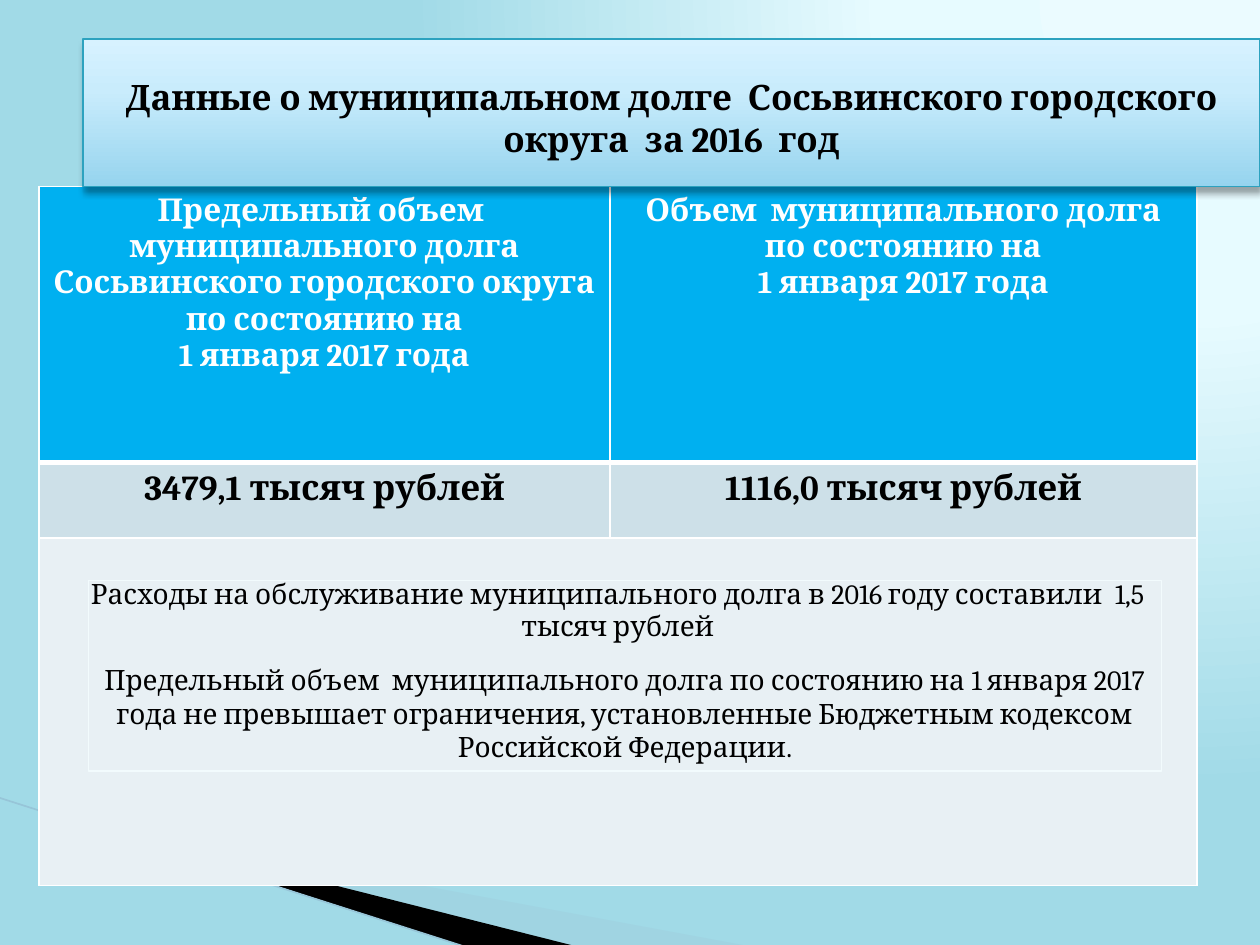
"""Build the slide on the municipal debt of the Sosva urban district."""
import dataclasses
from typing import Any, Optional

import lxml.etree
import pptx
import pptx.dml.color
import pptx.enum.shapes
import pptx.enum.text
import pptx.oxml
import pptx.oxml.ns
import pptx.util

Inches = pptx.util.Inches
Pt = pptx.util.Pt
RGB = pptx.dml.color.RGBColor
qn = pptx.oxml.ns.qn

FONT = "Cambria"
BLACK = RGB(0x00, 0x00, 0x00)
WHITE = RGB(0xFF, 0xFF, 0xFF)
HEADER_BLUE = RGB(0x00, 0xB0, 0xF0)
VALUE_BLUE = RGB(0xCD, 0xE0, 0xE8)
NOTE_BLUE = RGB(0xE8, 0xF0, 0xF4)
RIBBON_BLUE = RGB(0xA0, 0xCB, 0xDC)
RIBBON_LINE = RGB(0x97, 0xC5, 0xD8)
TITLE_LINE = RGB(0x2D, 0xA2, 0xBF)
FRAME_LINE = RGB(0xF2, 0xFB, 0xFD)
BACKGROUND_STOPS = [(0, RGB(0xEB, 0xFB, 0xFF)), (40, RGB(0xE7, 0xFB, 0xFF)),
                    (100, RGB(0xA1, 0xDA, 0xE7))]
TITLE_STOPS = [(0, RGB(0x96, 0xD4, 0xEE)), (65, RGB(0xC9, 0xEC, 0xFC)),
               (100, RGB(0xD7, 0xF2, 0xFF))]


@dataclasses.dataclass
class Ribbon:
    points: list[tuple[float, float]]
    color: RGB
    alpha: Optional[int] = None


@dataclasses.dataclass
class RowStyle:
    height: float
    fill: RGB
    color: RGB
    size: int
    bold: bool
    texts: list[list[str]]
    top: float = 0.05
    bottom_line: float = 1


RIBBONS = [
    Ribbon([(0.55, 6.51), (5.95, 7.51), (4.56, 7.51), (0.55, 6.5)], RIBBON_BLUE, 40),
    Ribbon([(0.53, 6.49), (4.57, 7.51), (3.72, 7.52), (0.54, 6.5)], BLACK),
]
COLUMNS = [4.53, 4.66]
DATE = "1 января 2017 года"
ROWS = [
    RowStyle(2.19, HEADER_BLUE, WHITE, 18, True, [
        ["Предельный объем  муниципального долга Сосьвинского городского округа "
         "по состоянию на", DATE],
        ["Объем  муниципального долга по состоянию на", DATE]], bottom_line=3),
    RowStyle(0.6, VALUE_BLUE, BLACK, 20, True,
             [["3479,1 тысяч рублей"], ["1116,0 тысяч рублей"]]),
    RowStyle(2.76, NOTE_BLUE, BLACK, 16, False, [
        ["Расходы на обслуживание муниципального долга в 2016 году составили  "
         "1,5 тысяч рублей"]], top=0.33),
]


def sub(parent: Any, tag: str, **attrs: Any) -> Any:
    return lxml.etree.SubElement(parent, qn(tag), {k: str(v) for k, v in attrs.items()})


def set_stops(grad: Any, stops: list[tuple[int, RGB]]) -> None:
    gs_lst = grad.find(qn("a:gsLst"))
    for gs in list(gs_lst):
        gs_lst.remove(gs)
    for pos, color in stops:
        sub(sub(gs_lst, "a:gs", pos=pos * 1000), "a:srgbClr", val=color)


def write(tf: Any, texts: list[str], size: int, color: RGB, bold: bool) -> None:
    tf.word_wrap = True
    for i, text in enumerate(texts):
        p = tf.paragraphs[0] if i == 0 else tf.add_paragraph()
        p.text = text
        p.alignment = pptx.enum.text.PP_ALIGN.CENTER
        p.font.name, p.font.size, p.font.bold = FONT, Pt(size), bold
        p.font.color.rgb = color


def add_background(s: Any) -> None:
    s.background.fill.gradient()
    grad = s.element.xpath(".//p:bg//a:gradFill")[0]
    set_stops(grad, BACKGROUND_STOPS)
    grad.remove(grad.find(qn("a:lin")))
    sub(sub(grad, "a:path", path="circle"), "a:fillToRect",
        l=95000, t=-106000, r=5000, b=206000)


def add_ribbon(s: Any, ribbon: Ribbon) -> None:
    points = [(Inches(x), Inches(y)) for x, y in ribbon.points]
    builder = s.shapes.build_freeform(*points[0])
    builder.add_line_segments(points[1:])
    sp = builder.convert_to_shape()
    sp.shadow.inherit = False
    sp.fill.solid()
    sp.fill.fore_color.rgb = ribbon.color
    sp.line.fill.background()
    if ribbon.alpha is not None:
        color = sp.element.spPr.find(qn("a:solidFill"))[0]
        sub(color, "a:alpha", val=ribbon.alpha * 1000)


def add_edge(s: Any) -> None:
    edge = s.shapes.add_connector(pptx.enum.shapes.MSO_CONNECTOR.STRAIGHT, Inches(-0.01),
                                  Inches(6.33), Inches(3.71), Inches(7.52))
    edge.line.color.rgb = RIBBON_LINE
    edge.line.width = Pt(0.95)
    sub(edge.element.spPr, "a:effectLst")


def set_borders(cell: Any, top: float, bottom: float) -> None:
    tc_pr = cell._tc.get_or_add_tcPr()
    widths = {"a:lnL": 1, "a:lnR": 1, "a:lnT": top, "a:lnB": bottom}
    for i, (tag, width) in enumerate(widths.items()):
        ln = sub(tc_pr, tag, w=Pt(width))
        sub(sub(ln, "a:solidFill"), "a:srgbClr", val=WHITE)
        tc_pr.insert(i, ln)


def add_debt_table(s: Any) -> None:
    frame = s.shapes.add_table(len(ROWS), len(COLUMNS), Inches(0.31), Inches(1.48),
                               Inches(sum(COLUMNS)), Inches(sum(r.height for r in ROWS)))
    table = frame.table
    for column, width in zip(table.columns, COLUMNS):
        column.width = Inches(width)
    top_line = 1.0
    for i, row in enumerate(ROWS):
        table.rows[i].height = Inches(row.height)
        for cell in table.rows[i].cells:
            cell.fill.solid()
            cell.fill.fore_color.rgb = row.fill
            cell.margin_top = Inches(row.top)
            set_borders(cell, top_line, row.bottom_line)
        for j, texts in enumerate(row.texts):
            write(table.cell(i, j).text_frame, texts, row.size, row.color, row.bold)
        top_line = row.bottom_line
    table.cell(2, 0).merge(table.cell(2, 1))


def place_title(s: Any) -> None:
    title = s.shapes.title
    title.left, title.top = Inches(0.66), Inches(0.31)
    title.width, title.height = Inches(9.34), Inches(1.17)
    title.fill.gradient()
    title.fill.gradient_angle = 90
    sp_pr = title.element.spPr
    set_stops(sp_pr.find(qn("a:gradFill")), TITLE_STOPS)
    title.line.color.rgb = TITLE_LINE
    title.line.width = Pt(0.75)
    shadow = sub(sub(sp_pr, "a:effectLst"), "a:outerShdw", blurRad=Pt(4), dist=Pt(3),
                 dir=90 * 60000, rotWithShape=0)
    sub(sub(shadow, "a:srgbClr", val=BLACK), "a:alpha", val=35000)
    tf = title.text_frame
    tf.auto_size = pptx.enum.text.MSO_AUTO_SIZE.NONE
    tf.vertical_anchor = pptx.enum.text.MSO_ANCHOR.MIDDLE
    tf.margin_top = Inches(0.13)
    write(tf, ["Данные о муниципальном долге  Сосьвинского городского округа  за 2016  год"],
          20, BLACK, True)
    title.element.getparent().append(title.element)


def add_limit_note(s: Any) -> None:
    sp = s.shapes.add_shape(pptx.enum.shapes.MSO_SHAPE.RECTANGLE, Inches(0.7), Inches(4.61),
                            Inches(8.52), Inches(1.51))
    sp.shadow.inherit = False
    sp.fill.background()
    sp.line.color.rgb = FRAME_LINE
    sp.line.width = Pt(0.75)
    tf = sp.text_frame
    tf.vertical_anchor = pptx.enum.text.MSO_ANCHOR.TOP
    tf.margin_top = Inches(0.65)
    write(tf, ["Предельный объем  муниципального долга по состоянию на 1 января 2017 года "
               "не превышает ограничения, установленные Бюджетным кодексом "
               "Российской Федерации."], 16, BLACK, False)


def main() -> None:
    prs = pptx.Presentation()
    prs.slide_width, prs.slide_height = Inches(10), Inches(7.5)
    s = prs.slides.add_slide(prs.slide_layouts[5])
    add_background(s)
    for ribbon in RIBBONS:
        add_ribbon(s, ribbon)
    add_edge(s)
    add_debt_table(s)
    place_title(s)
    add_limit_note(s)
    prs.save("out.pptx")


if __name__ == "__main__":
    main()
